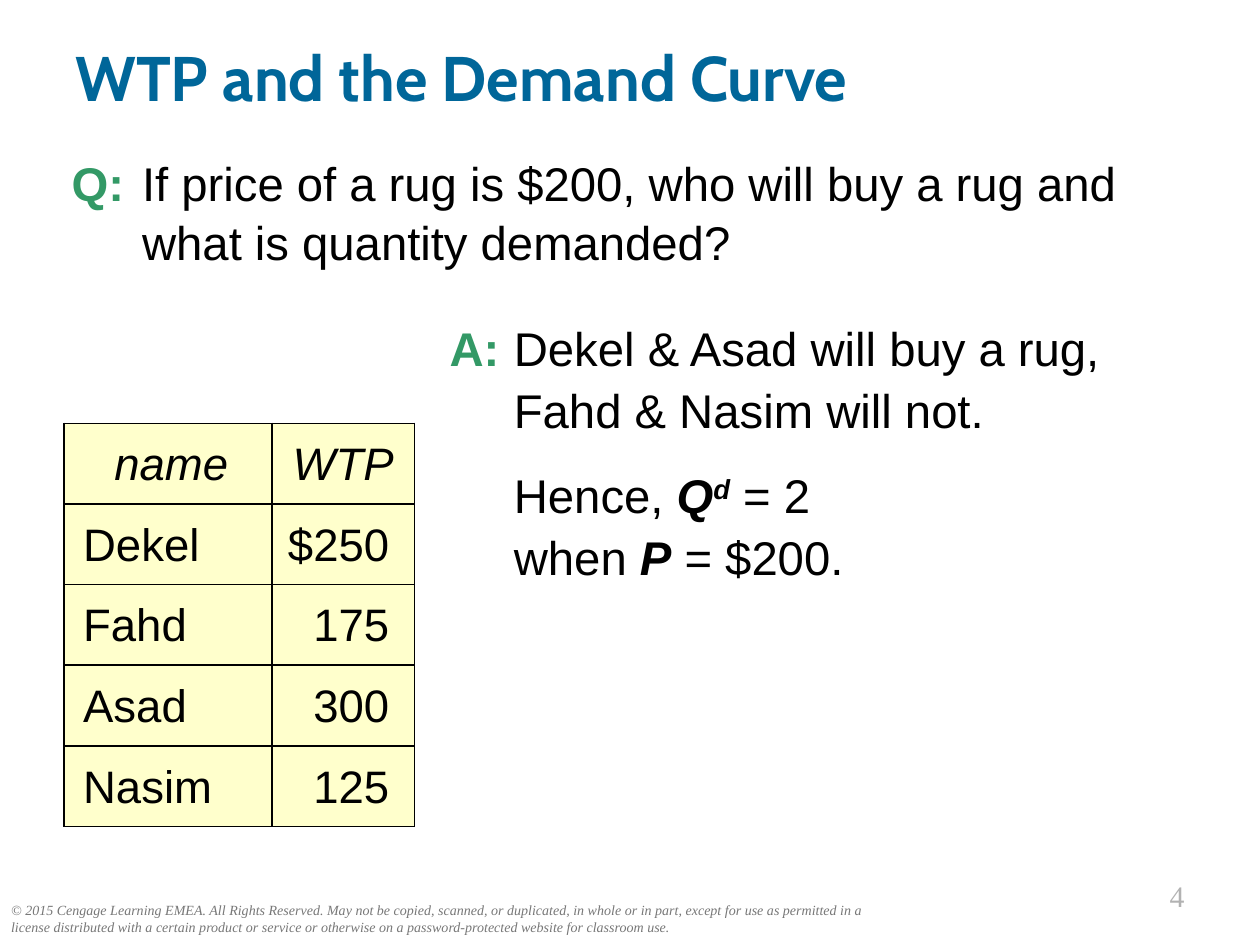
from dataclasses import dataclass

from lxml.etree import SubElement
from pptx import Presentation
from pptx.dml.color import RGBColor
from pptx.enum.text import MSO_ANCHOR, PP_ALIGN
from pptx.oxml import parse_xml
from pptx.oxml.ns import nsdecls, qn
from pptx.util import Inches, Pt


@dataclass(frozen=True)
class Theme:
    heading_font: str = "Cabin"
    body_font: str = "Arial"
    footer_font: str = "Times New Roman"
    heading: str = "006699"
    label: str = "339966"
    ink: str = "000000"
    notice: str = "777777"
    number: str = "B2B2B2"
    cell: str = "FFFFCC"
    heading_size: float = 36
    body_size: float = 27
    table_size: float = 26
    number_size: float = 17
    notice_size: float = 8


class SlideBuilder:
    def __init__(self, slide, theme):
        self.slide = slide
        self.theme = theme

    def style(self, run, font, size, color, bold=False, italic=False):
        run.font.name = font
        run.font.size = Pt(size)
        run.font.color.rgb = RGBColor.from_string(color)
        run.font.bold = bold
        run.font.italic = italic

    def frame(self, left, top, width, height):
        box = self.slide.shapes.add_textbox(
            Inches(left), Inches(top), Inches(width), Inches(height))
        box.text_frame.word_wrap = True
        return box.text_frame

    def line(self, area, text, font, size, color, align=PP_ALIGN.LEFT,
             anchor=MSO_ANCHOR.TOP, **emphasis):
        frame = self.frame(*area)
        frame.vertical_anchor = anchor
        paragraph = frame.paragraphs[0]
        paragraph.text = text
        paragraph.alignment = align
        self.style(paragraph.runs[0], font, size, color, **emphasis)

    def hanging_text(self, area, paragraphs, indent, spacing):
        """Each paragraph is a list of (text, role) parts; "\\n" breaks the line."""
        frame = self.frame(*area)
        for index, parts in enumerate(paragraphs):
            paragraph = frame.add_paragraph() if index else frame.paragraphs[0]
            properties = paragraph._p.get_or_add_pPr()
            properties.set("marL", str(Inches(indent)))
            properties.set("indent", str(-Inches(indent)))
            paragraph.line_spacing = spacing
            if index:
                paragraph.space_before = Pt(12.5)
            for text, role in parts:
                if text == "\n":
                    paragraph.add_line_break()
                    continue
                run = paragraph.add_run()
                run.text = text
                symbol = role in ("symbol", "superscript")
                self.style(run, self.theme.body_font, self.theme.body_size,
                           self.theme.label if role == "label" else self.theme.ink,
                           bold=symbol or role == "label", italic=symbol)
                if role == "superscript":
                    run.font._element.set("baseline", "30000")

    def border(self, cell):
        properties = cell._tc.get_or_add_tcPr()
        for position, side in enumerate(("lnL", "lnR", "lnT", "lnB")):
            edge = parse_xml(f'<a:{side} {nsdecls("a")} w="{Pt(1)}"/>')
            fill = SubElement(edge, qn("a:solidFill"))
            SubElement(fill, qn("a:srgbClr"), val=self.theme.ink)
            properties.insert(position, edge)

    def table(self, left, top, widths, row_height, rows):
        grid = self.slide.shapes.add_table(
            len(rows), len(widths), Inches(left), Inches(top),
            Inches(sum(widths)), Inches(row_height * len(rows))).table
        grid.first_row = grid.horz_banding = False
        for column, width in zip(grid.columns, widths):
            column.width = Inches(width)
        for r, row in enumerate(rows):
            grid.rows[r].height = Inches(row_height)
            for c, text in enumerate(row):
                cell = grid.cell(r, c)
                cell.fill.solid()
                cell.fill.fore_color.rgb = RGBColor.from_string(self.theme.cell)
                self.border(cell)
                cell.vertical_anchor = MSO_ANCHOR.MIDDLE
                cell.margin_left = Inches(0.15 if c == 0 else 0.1)
                cell.margin_right = Inches(0.2 if c and r else 0.1)
                paragraph = cell.text_frame.paragraphs[0]
                paragraph.text = text
                paragraph.line_spacing = 1.05
                body_align = PP_ALIGN.RIGHT if c else PP_ALIGN.LEFT
                paragraph.alignment = body_align if r else PP_ALIGN.CENTER
                self.style(paragraph.runs[0], self.theme.body_font,
                           self.theme.table_size, self.theme.ink, italic=r == 0)


def main():
    presentation = Presentation()
    presentation.slide_width = Inches(10)
    presentation.slide_height = Inches(7.5)
    theme = Theme()
    builder = SlideBuilder(
        presentation.slides.add_slide(presentation.slide_layouts[6]), theme)

    builder.line(
        (-0.01, 7.11, 7.26, 0.37),
        "© 2015 Cengage Learning EMEA. All Rights Reserved. May not be copied, "
        "scanned, or duplicated, in whole or in part, except for use as permitted "
        "in a license distributed with a certain product or service or otherwise "
        "on a password-protected website for classroom use.",
        theme.footer_font, theme.notice_size, theme.notice, italic=True)
    builder.line((8.25, 6.92, 1.25, 0.39), "4", theme.footer_font,
                 theme.number_size, theme.number, align=PP_ALIGN.RIGHT)
    builder.line((0.5, 0.25, 9, 0.71), "WTP and the Demand Curve",
                 theme.heading_font, theme.heading_size, theme.heading,
                 anchor=MSO_ANCHOR.MIDDLE, bold=True)

    question = [
        ("Q:\t", "label"),
        ("If price of a rug is $200, who will buy a rug and "
         "what is quantity demanded?", "plain"),
    ]
    builder.hanging_text((0.47, 1.15, 8.94, 1.2), [question], 0.56, 1.05)

    answer = [
        ("A:", "label"),
        ("\tDekel & Asad will buy a rug, Fahd & Nasim will not.", "plain"),
    ]
    conclusion = [
        ("\tHence, ", "plain"), ("Q", "symbol"), ("d", "superscript"),
        (" = 2 ", "plain"), ("\n", "plain"), ("when ", "plain"),
        ("P", "symbol"), (" = $200.", "plain"),
    ]
    builder.hanging_text((3.47, 2.44, 6.12, 2.28), [answer, conclusion], 0.51, 1.1)

    builder.table(0.51, 3.36, (1.65, 1.13), 0.64, [
        ("name", "WTP"),
        ("Dekel", "$250"),
        ("Fahd", "175"),
        ("Asad", "300"),
        ("Nasim", "125"),
    ])
    presentation.save("out.pptx")


if __name__ == "__main__":
    main()
